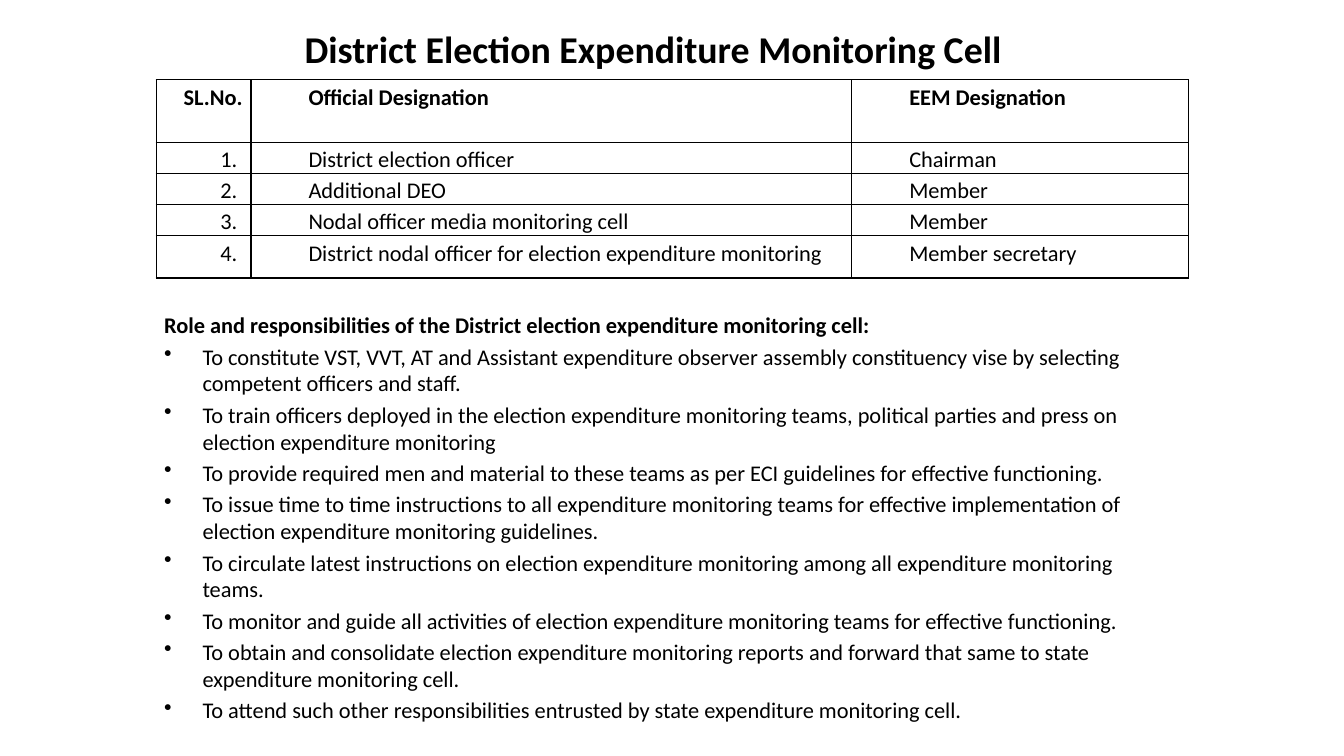
from dataclasses import dataclass, field

import pptx
import pptx.dml.color
import pptx.enum.text
import pptx.oxml
import pptx.oxml.ns
import pptx.util
from lxml import etree

ALIGN = pptx.enum.text.PP_ALIGN
ANCHOR = pptx.enum.text.MSO_ANCHOR
COLOURS = {"text": "000000", "border": "000000", "paper": "FFFFFF"}
FONT = "Calibri"

# The slide is a grid of 100 columns by 100 rows
SLIDE_WIDTH = pptx.util.Inches(13.33)
SLIDE_HEIGHT = pptx.util.Inches(7.5)


def columns(count: float) -> int:
    return round(SLIDE_WIDTH * count / 100)


def rows(count: float) -> int:
    return round(SLIDE_HEIGHT * count / 100)


@dataclass
class Area:
    left: float
    top: float
    width: float
    height: float

    def place(self) -> tuple[int, int, int, int]:
        return (columns(self.left), rows(self.top),
                columns(self.width), rows(self.height))


@dataclass
class TextLine:
    text: str
    size: float = 16
    bold: bool = False
    bullet: bool = False
    left_indent: float = 0
    first_indent: float = 0
    format: dict = field(default_factory=dict)


TITLE_AREA = Area(14.85, 2.13, 67.5, 8.53)
BODY_AREA = Area(11.48, 40.53, 76.8, 53.07)
COLUMN_WIDTHS = [7.05, 44.7, 25.05]
ROW_HEIGHTS = [8.27, 4.13, 4.13, 4.13, 5.6]
TABLE_AREA = Area(11.63, 10.53, sum(COLUMN_WIDTHS), sum(ROW_HEIGHTS))

TITLE = "District Election Expenditure Monitoring Cell"
HEADER = ("SL.No.", "Official Designation", "EEM Designation")
MEMBERS = [
    ("District election officer", "Chairman"),
    ("Additional DEO", "Member"),
    ("Nodal officer media monitoring cell", "Member"),
    ("District nodal officer for election expenditure monitoring", "Member secretary"),
]
ROLES_HEADING = ("Role and responsibilities of the District election expenditure "
                 "monitoring cell:")
ROLES = [
    "To constitute VST, VVT, AT and Assistant expenditure observer assembly "
    "constituency vise by selecting competent officers and staff.",
    "To train officers deployed in the election expenditure monitoring teams, "
    "political parties and press on election expenditure monitoring",
    "To provide required men and material to these teams as per ECI guidelines "
    "for effective functioning.",
    "To issue time to time instructions to all expenditure monitoring teams for "
    "effective implementation of election expenditure monitoring guidelines.",
    "To circulate latest instructions on election expenditure monitoring among "
    "all expenditure monitoring teams.",
    "To monitor and guide all activities of election expenditure monitoring "
    "teams for effective functioning.",
    "To obtain and consolidate election expenditure monitoring reports and "
    "forward that same to state expenditure monitoring cell.",
    "To attend such other responsibilities entrusted by state expenditure "
    "monitoring cell.",
]


def apply_format(target: object, values: dict) -> None:
    for name, value in values.items():
        setattr(target, name, value)


def write_lines(frame, lines: list[TextLine]) -> None:
    for index, line in enumerate(lines):
        paragraph = frame.add_paragraph() if index else frame.paragraphs[0]
        apply_format(paragraph, line.format)
        properties = paragraph._p.get_or_add_pPr()
        properties.set("marL", str(pptx.util.Inches(line.left_indent)))
        properties.set("indent", str(pptx.util.Inches(line.first_indent)))
        if line.bullet:
            bullet = etree.SubElement(properties, pptx.oxml.ns.qn("a:buChar"))
            bullet.set("char", "•")
        run = paragraph.add_run()
        run.text = line.text
        apply_format(run.font, {"name": FONT, "bold": line.bold,
                                "size": pptx.util.Pt(line.size)})
        run.font.color.rgb = pptx.dml.color.RGBColor.from_string(COLOURS["text"])


def add_text(slide, area: Area, anchor, lines: list[TextLine]) -> None:
    frame = slide.shapes.add_textbox(*area.place()).text_frame
    apply_format(frame, {"word_wrap": True, "vertical_anchor": anchor})
    write_lines(frame, lines)


def add_borders(cell) -> None:
    properties = cell._tc.get_or_add_tcPr()
    for position, side in enumerate(("lnL", "lnR", "lnT", "lnB")):
        border = pptx.oxml.parse_xml(
            f'<a:{side} {pptx.oxml.ns.nsdecls("a")} w="{pptx.util.Pt(1)}">'
            f'<a:solidFill><a:srgbClr val="{COLOURS["border"]}"/></a:solidFill>'
            f'</a:{side}>')
        properties.insert(position, border)


def add_members_table(slide) -> None:
    records = [HEADER] + [(f"{number}.", *member)
                          for number, member in enumerate(MEMBERS, 1)]
    table = slide.shapes.add_table(len(records), len(HEADER), *TABLE_AREA.place()).table
    apply_format(table, {"first_row": False, "horz_banding": False})
    for column, width in zip(table.columns, COLUMN_WIDTHS):
        column.width = columns(width)
    for row, height in zip(table.rows, ROW_HEIGHTS):
        row.height = rows(height)

    side_margin = pptx.util.Inches(0.07)
    for row_index, record in enumerate(records):
        for column_index, text in enumerate(record):
            is_header, is_number = row_index == 0, column_index == 0
            cell = table.cell(row_index, column_index)
            apply_format(cell, {"margin_left": side_margin, "margin_right": side_margin,
                                "margin_top": 0, "margin_bottom": 0})
            cell.fill.background()
            add_borders(cell)
            alignment = ALIGN.CENTER if is_number and not is_header else ALIGN.JUSTIFY
            write_lines(cell.text_frame, [TextLine(
                text, bold=is_header,
                left_indent=0.2 if is_header and is_number else 0.5,
                format={"alignment": alignment, "line_spacing": 1.15})])


def main() -> None:
    presentation = pptx.Presentation()
    apply_format(presentation, {"slide_width": SLIDE_WIDTH, "slide_height": SLIDE_HEIGHT})
    slide = presentation.slides.add_slide(presentation.slide_layouts[6])
    slide.background.fill.solid()
    slide.background.fill.fore_color.rgb = pptx.dml.color.RGBColor.from_string(
        COLOURS["paper"])

    # Title
    add_text(slide, TITLE_AREA, ANCHOR.MIDDLE,
             [TextLine(TITLE, size=27, bold=True, format={"alignment": ALIGN.CENTER})])

    # Roles and responsibilities
    hanging = {"left_indent": 0.38, "first_indent": -0.38,
               "format": {"space_before": pptx.util.Pt(3.2)}}
    add_text(slide, BODY_AREA, ANCHOR.TOP,
             [TextLine(ROLES_HEADING, bold=True, **hanging)]
             + [TextLine(role, bullet=True, **hanging) for role in ROLES])

    # Members of the cell
    add_members_table(slide)

    presentation.save("out.pptx")


if __name__ == "__main__":
    main()
